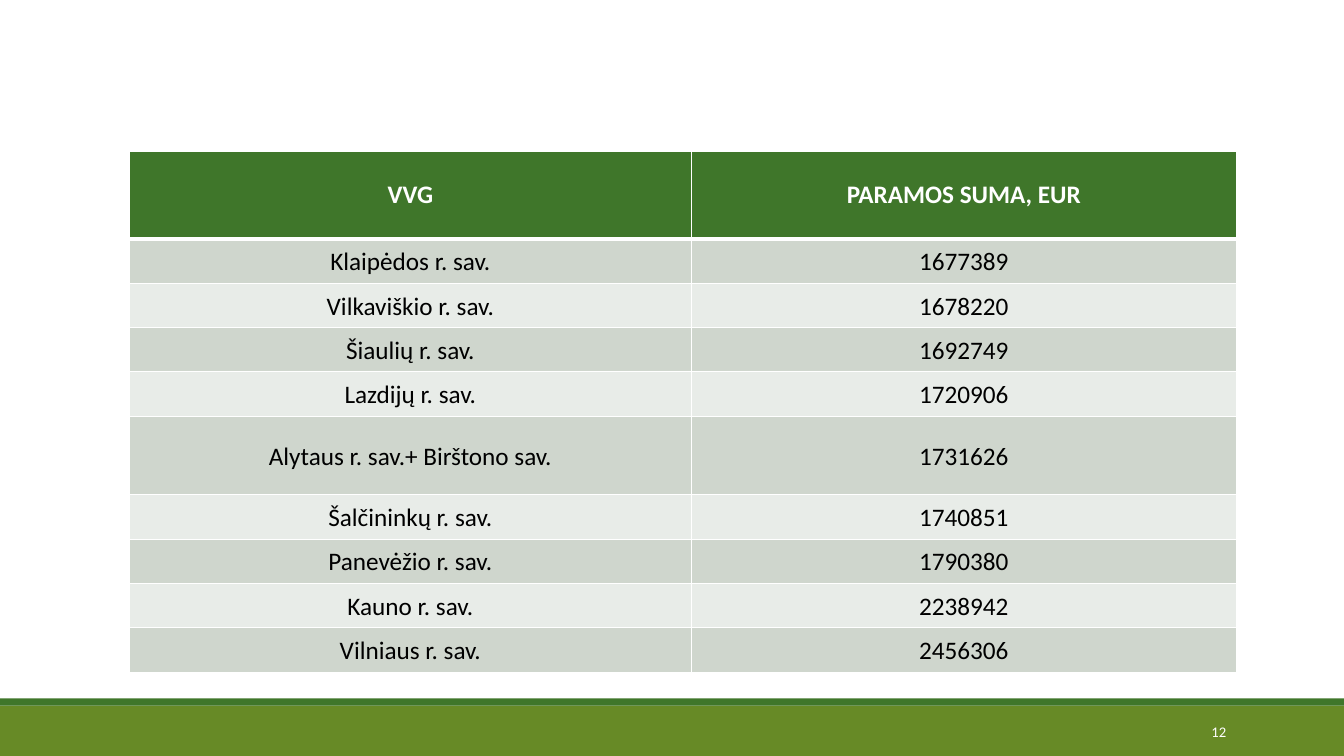
from dataclasses import dataclass

from lxml.etree import SubElement
from pptx import Presentation
from pptx.dml.color import RGBColor
from pptx.enum.shapes import MSO_SHAPE as Preset
from pptx.enum.text import MSO_ANCHOR as Anchor, PP_ALIGN as Align
from pptx.oxml import parse_xml
from pptx.oxml.ns import nsdecls, qn
from pptx.util import Inches, Pt

FONT = "Calibri"
WHITE, BLACK = "FFFFFF", "000000"
DARK_GREEN, OLIVE = "3F762A", "678A26"
BAND_FILLS = ("CFD6CD", "E8ECE8")
COLUMN_WIDTHS = (5.58, 5.4)
ROW_HEIGHT = 0.44


@dataclass
class Bar:
    top: float
    height: float
    fill: str


@dataclass
class Grant:
    region: str
    amount: str
    height: float = ROW_HEIGHT


@dataclass
class RowStyle:
    fill: str
    color: str
    bold: bool
    bottom_border: float


BARS = [Bar(7, 0.5, OLIVE), Bar(6.93, 0.07, DARK_GREEN)]
HEADER = Grant("VVG", "PARAMOS SUMA, EUR", 0.87)
GRANTS = [
    Grant("Klaipėdos r. sav.", "1677389"),
    Grant("Vilkaviškio r. sav.", "1678220"),
    Grant("Šiaulių r. sav.", "1692749"),
    Grant("Lazdijų r. sav.", "1720906"),
    Grant("Alytaus r. sav.+ Birštono sav.", "1731626", 0.78),
    Grant("Šalčininkų r. sav.", "1740851"),
    Grant("Panevėžio r. sav.", "1790380"),
    Grant("Kauno r. sav.", "2238942"),
    Grant("Vilniaus r. sav.", "2456306"),
]


def rgb(value: str) -> RGBColor:
    return RGBColor.from_string(value)


def style_paragraph(para, align, size: float, color: str, bold: bool = False) -> None:
    para.alignment = align
    font = para.font
    font.name, font.size, font.bold = FONT, Pt(size), bold
    font.color.rgb = rgb(color)


def add_bar(page, bar: Bar, width: int) -> None:
    shape = page.shapes.add_shape(
        Preset.RECTANGLE, 0, Inches(bar.top), width, Inches(bar.height))
    shape.shadow.inherit = False
    shape.fill.solid()
    shape.fill.fore_color.rgb = rgb(bar.fill)
    shape.line.fill.background()


def add_page_number(page, number: str) -> None:
    box = page.shapes.add_textbox(
        Inches(10.83), Inches(7.06), Inches(1.43), Inches(0.4))
    frame = box.text_frame
    frame.word_wrap = True
    frame.vertical_anchor = Anchor.MIDDLE
    frame.text = number
    style_paragraph(frame.paragraphs[0], Align.RIGHT, 10.5, WHITE)


def set_borders(cell, bottom: float, top: float) -> None:
    """Draw white cell borders, placed before the fill as the schema requires."""
    properties = cell._tc.get_or_add_tcPr()
    widths = {"lnL": 1, "lnR": 1, "lnT": top, "lnB": bottom}
    for index, (side, width) in enumerate(widths.items()):
        line = parse_xml(f'<a:{side} {nsdecls("a")} w="{Pt(width)}"/>')
        fill = SubElement(line, qn("a:solidFill"))
        SubElement(fill, qn("a:srgbClr"), val=WHITE)
        properties.insert(index, line)


def fill_cell(cell, text: str, style: RowStyle, top_border: float) -> None:
    cell.text = text
    cell.vertical_anchor = Anchor.MIDDLE
    cell.fill.solid()
    cell.fill.fore_color.rgb = rgb(style.fill)
    set_borders(cell, style.bottom_border, top_border)
    para = cell.text_frame.paragraphs[0]
    style_paragraph(para, Align.CENTER, 18, style.color, style.bold)
    if not style.bold:
        cell.margin_left = cell.margin_right = Inches(0.07)
        cell.margin_top = cell.margin_bottom = 0
        para.line_spacing = 1.07


def add_grant_table(page) -> None:
    rows = [HEADER, *GRANTS]
    styles = [RowStyle(DARK_GREEN, WHITE, True, 3)]
    styles += [RowStyle(BAND_FILLS[index % 2], BLACK, False, 1)
               for index in range(len(GRANTS))]
    table = page.shapes.add_table(
        len(rows), len(COLUMN_WIDTHS), Inches(1.28), Inches(1.5),
        Inches(sum(COLUMN_WIDTHS)), Inches(sum(row.height for row in rows))).table
    for column, width in zip(table.columns, COLUMN_WIDTHS):
        column.width = Inches(width)
    top_border = 1
    for index, (row, style) in enumerate(zip(rows, styles)):
        table.rows[index].height = Inches(row.height)
        for cell, text in zip(table.rows[index].cells, (row.region, row.amount)):
            fill_cell(cell, text, style, top_border)
        top_border = style.bottom_border


def main() -> None:
    deck = Presentation()
    deck.slide_width, deck.slide_height = Inches(13.33), Inches(7.5)
    page = deck.slides.add_slide(deck.slide_layouts[6])
    for bar in BARS:
        add_bar(page, bar, deck.slide_width)
    add_page_number(page, "12")
    add_grant_table(page)
    deck.save("out.pptx")


if __name__ == "__main__":
    main()
